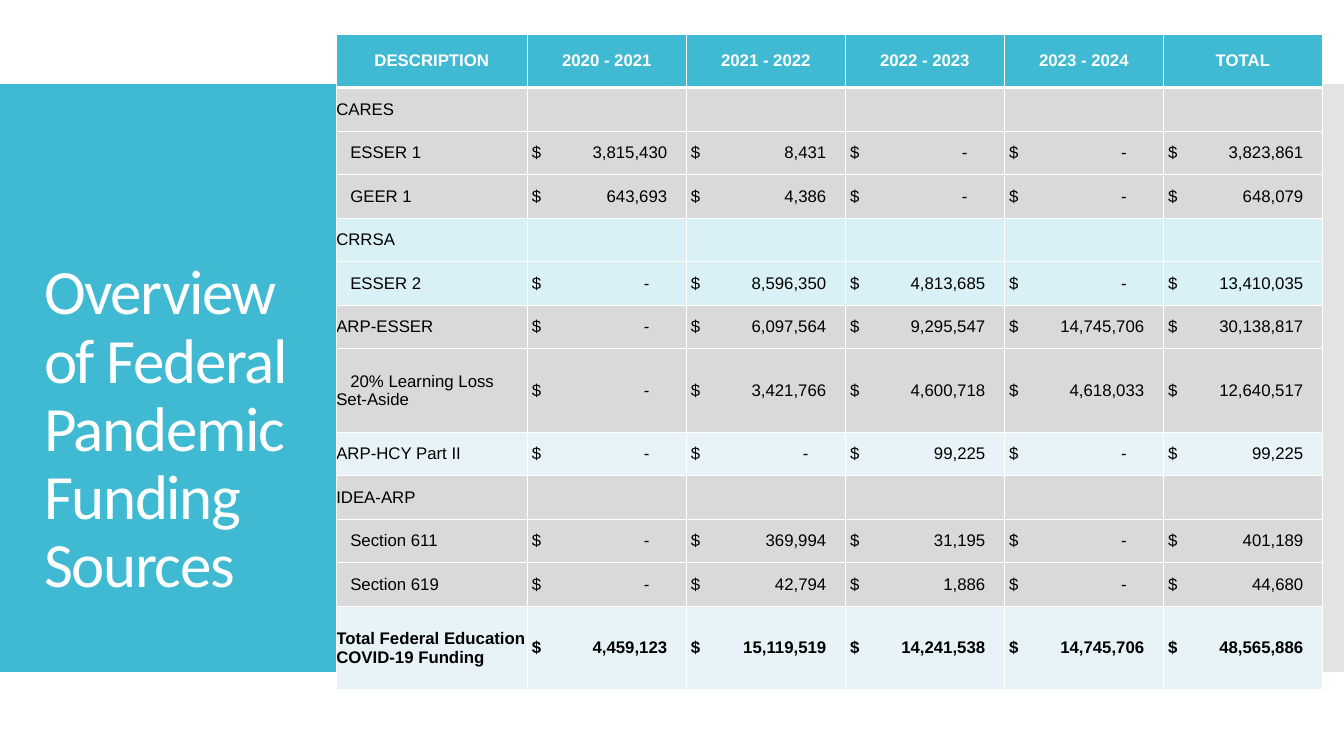
from lxml import etree
from pptx import Presentation
from pptx.dml.color import RGBColor
from pptx.enum import shapes, text
from pptx.oxml import ns
from pptx.util import Pt

TEAL, WHITE, BLACK = "40BAD2", "FFFFFF", "000000"
GREY, AQUA, PALE = "D9D9D9", "D9F1F6", "E8F3F7"

HEADINGS = ["DESCRIPTION", "2020 - 2021", "2021 - 2022", "2022 - 2023", "2023 - 2024", "TOTAL"]
# Label, indented, row fill, yearly amounts and total
FUNDING = [
    ("CARES", False, GREY, []),
    ("ESSER 1", True, GREY, ["3,815,430", "8,431", "-", "-", "3,823,861"]),
    ("GEER 1", True, GREY, ["643,693", "4,386", "-", "-", "648,079"]),
    ("CRRSA", False, AQUA, []),
    ("ESSER 2", True, AQUA, ["-", "8,596,350", "4,813,685", "-", "13,410,035"]),
    ("ARP-ESSER", False, GREY, ["-", "6,097,564", "9,295,547", "14,745,706", "30,138,817"]),
    ("20% Learning Loss Set-Aside", True, GREY,
     ["-", "3,421,766", "4,600,718", "4,618,033", "12,640,517"]),
    ("ARP-HCY Part II", False, PALE, ["-", "-", "99,225", "-", "99,225"]),
    ("IDEA-ARP", False, GREY, []),
    ("Section 611", True, GREY, ["-", "369,994", "31,195", "-", "401,189"]),
    ("Section 619", True, GREY, ["-", "42,794", "1,886", "-", "44,680"]),
    ("Total Federal Education COVID-19 Funding", False, PALE,
     ["4,459,123", "15,119,519", "14,241,538", "14,745,706", "48,565,886"]),
]
HEADER_HEIGHT, ROW_HEIGHT, TALL_HEIGHT = 38.2, 31.1, 59.6
TALL_ROWS = {7, 12}
LABEL_WIDTH, AMOUNT_WIDTH = 136.5, 113.6
DOLLAR_INSET, NUMBER_EDGE, DASH_EDGE = 3.3, 96.7, 84


def color(value):
    return RGBColor.from_string(value)


def add_child(parent, tag, **attributes):
    return etree.SubElement(parent, ns.qn(tag), **attributes)


def add_span(para, words, size, font, shade, bold=False):
    span = para.add_run()
    span.text = words
    span.font.size = Pt(size)
    span.font.name = font
    span.font.bold = bold
    span.font.color.rgb = color(shade)
    return span


def add_panel(page, box, shade, opacity=100):
    panel = page.shapes.add_shape(shapes.MSO_SHAPE.RECTANGLE, *map(Pt, box))
    panel.shadow.inherit = False
    panel.fill.solid()
    panel.fill.fore_color.rgb = color(shade)
    panel.line.fill.background()
    if opacity < 100:
        rgb = panel.fill._xPr.find(".//" + ns.qn("a:srgbClr"))
        add_child(rgb, "a:alpha", val=str(opacity * 1000))


def add_title(page, box):
    frame = page.shapes.add_textbox(*map(Pt, box)).text_frame
    frame.word_wrap = True
    frame.vertical_anchor = text.MSO_ANCHOR.BOTTOM
    para = frame.paragraphs[0]
    para.line_spacing = 0.9
    span = add_span(para, "Overview of Federal Pandemic Funding Sources", 45, "Calibri", WHITE)
    span.font._element.set("spc", "-100")


def style_cell(cell, shade, bottom_width=1):
    cell.margin_left = cell.margin_right = cell.margin_top = cell.margin_bottom = 0
    cell.vertical_anchor = text.MSO_ANCHOR.MIDDLE
    cell.text_frame.paragraphs[0].font.size = Pt(12)
    # Borders come before the fill in the cell properties
    properties = cell._tc.get_or_add_tcPr()
    for side in "LRTB":
        width = bottom_width if side == "B" else 1
        edge = add_child(properties, "a:ln" + side, w=str(Pt(width)))
        add_child(add_child(edge, "a:solidFill"), "a:srgbClr", val=WHITE)
    cell.fill.solid()
    cell.fill.fore_color.rgb = color(shade)


def fill_label(cell, label, indented, bold):
    para = cell.text_frame.paragraphs[0]
    if indented:
        para._p.get_or_add_pPr().set("indent", str(Pt(10)))
    add_span(para, label, 12, "Arial", BLACK, bold)


def fill_amount(cell, amount, bold):
    cell.margin_left = Pt(DOLLAR_INSET)
    para = cell.text_frame.paragraphs[0]
    # A right tab stop lines up the amounts
    edge = DASH_EDGE if amount == "-" else NUMBER_EDGE
    stops = etree.Element(ns.qn("a:tabLst"))
    add_child(stops, "a:tab", pos=str(Pt(edge)), algn="r")
    para._p.get_or_add_pPr().insert(0, stops)
    add_span(para, "$\t" + amount, 12, "Arial", BLACK, bold)


def add_funding_table(page, left, top):
    heights = [HEADER_HEIGHT] + [TALL_HEIGHT if row in TALL_ROWS else ROW_HEIGHT
                                 for row in range(1, len(FUNDING) + 1)]
    widths = [LABEL_WIDTH] + [AMOUNT_WIDTH] * (len(HEADINGS) - 1)
    box = (left, top, sum(widths), sum(heights))
    table = page.shapes.add_table(len(heights), len(widths), *map(Pt, box)).table
    for column, width in zip(table.columns, widths):
        column.width = Pt(width)
    for row, height in zip(table.rows, heights):
        row.height = Pt(height)

    # Header row
    for cell, heading in zip(table.rows[0].cells, HEADINGS):
        style_cell(cell, TEAL, bottom_width=3)
        para = cell.text_frame.paragraphs[0]
        para.alignment = text.PP_ALIGN.CENTER
        add_span(para, heading, 12, "Arial", WHITE, True)

    # Funding rows
    for number, (label, indented, shade, amounts) in enumerate(FUNDING, 1):
        cells = list(table.rows[number].cells)
        bold = number == len(FUNDING)
        for cell in cells:
            style_cell(cell, shade)
        fill_label(cells[0], label, indented, bold)
        for cell, amount in zip(cells[1:], amounts):
            fill_amount(cell, amount, bold)


def build_funding_page(deck):
    page = deck.slides.add_slide(deck.slide_layouts[6])
    # Side panels
    add_panel(page, (0, 60, 479.5, 420), TEAL)
    add_panel(page, (930, 60, 30, 420), "C8C8C8", opacity=50)
    # Title and table
    add_title(page, (24.5, 75.6, 197.3, 357.1))
    add_funding_table(page, 240.2, 24.4)


def main():
    deck = Presentation()
    deck.slide_width, deck.slide_height = Pt(960), Pt(540)
    build_funding_page(deck)
    deck.save("out.pptx")


if __name__ == "__main__":
    main()
